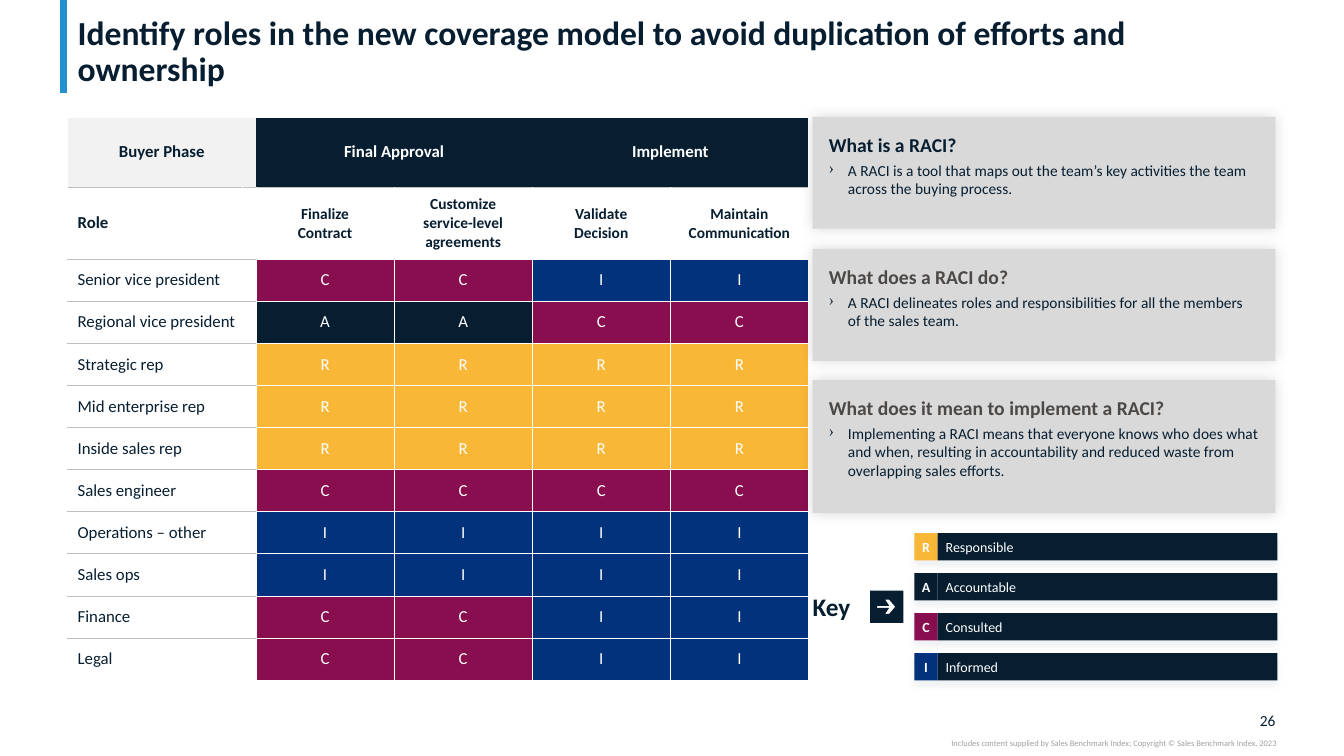
from lxml.etree import SubElement
from pptx import Presentation
from pptx.dml.color import RGBColor
from pptx.enum.shapes import MSO_CONNECTOR, MSO_SHAPE
from pptx.enum.text import MSO_ANCHOR, PP_ALIGN
from pptx.oxml.ns import qn
from pptx.util import Inches, Pt

NAVY, WHITE, GREY = "071E31", "FFFFFF", "BFBFBF"
LEFT, MID, RIGHT = PP_ALIGN.LEFT, PP_ALIGN.CENTER, PP_ALIGN.RIGHT
CODES = {"R": ("Responsible", "F8B737"), "A": ("Accountable", NAVY),
         "C": ("Consulted", "880E4F"), "I": ("Informed", "03327C")}
STEPS = ["Finalize\nContract", "Customize\nservice-level agreements",
         "Validate\nDecision", "Maintain Communication"]
ROLES = [("Senior vice president", "CCII"), ("Regional vice president", "AACC"),
         ("Strategic rep", "RRRR"), ("Mid enterprise rep", "RRRR"),
         ("Inside sales rep", "RRRR"), ("Sales engineer", "CCCC"),
         ("Operations – other", "IIII"), ("Sales ops", "IIII"),
         ("Finance", "CCII"), ("Legal", "CCII")]
CARDS = [
    (1.16, 1.11, NAVY, "What is a RACI?",
     "A RACI is a tool that maps out the team’s key activities the team "
     "across the buying process."),
    (2.47, 1.11, "4C4846", "What does a RACI do?",
     "A RACI delineates roles and responsibilities for all the members of "
     "the sales team."),
    (3.77, 1.32, "4C4846", "What does it mean to implement a RACI?",
     "Implementing a RACI means that everyone knows who does what and when, "
     "resulting in accountability and reduced waste from overlapping sales efforts."),
]
ARROW = [(8.82, 6.01), (8.78, 5.95), (8.82, 5.95), (8.88, 6.02), (8.82, 6.09),
         (8.78, 6.09), (8.82, 6.03), (8.7, 6.03), (8.7, 6.01)]


def tint(code):
    return RGBColor.from_string(code)


def inch(points):
    return [(Inches(x), Inches(y)) for x, y in points]


class Board:
    font = "Calibri"

    def __init__(self, slide):
        self.slide = slide
        self.host = slide.shapes

    def group(self):
        """Send the elements that follow into a new group."""
        self.host = self.slide.shapes.add_group_shape().shapes

    def words(self, para, text, size, color=NAVY, bold=False, align=LEFT):
        para.alignment = align
        for i, part in enumerate(text.split("\n")):
            if i:
                para.add_line_break()
            run = para.add_run()
            run.text = part
            run.font.name = self.font
            run.font.size = Pt(size)
            run.font.bold = bold
            run.font.color.rgb = tint(color)

    def frame(self, shape, inset=(0, 0, 0, 0), anchor=MSO_ANCHOR.MIDDLE, wrap=True):
        frame = shape.text_frame
        frame.word_wrap = wrap
        frame.vertical_anchor = anchor
        (frame.margin_left, frame.margin_top,
         frame.margin_right, frame.margin_bottom) = map(Inches, inset)
        return frame

    def title(self, text, *box):
        shape = self.slide.shapes.title
        shape.left, shape.top, shape.width, shape.height = map(Inches, box)
        para = self.frame(shape, (0.1, 0, 0.1, 0), MSO_ANCHOR.BOTTOM).paragraphs[0]
        para.line_spacing = 0.9
        self.words(para, text, 24, bold=True)

    def label(self, text, box, size, anchor=MSO_ANCHOR.MIDDLE, wrap=True, **style):
        shape = self.host.add_textbox(*map(Inches, box))
        self.words(self.frame(shape, anchor=anchor, wrap=wrap).paragraphs[0],
                   text, size, **style)

    def line(self, x1, y1, x2, y2, color, width):
        line = self.host.add_connector(MSO_CONNECTOR.STRAIGHT,
                                       *map(Inches, (x1, y1, x2, y2)))
        line.line.color.rgb = tint(color)
        line.line.width = Pt(width)
        SubElement(line._element.spPr, qn("a:effectLst"))

    def paint(self, shape, color):
        shape.fill.solid()
        shape.fill.fore_color.rgb = tint(color)
        shape.line.fill.background()
        shape.shadow.inherit = False

    def rect(self, box, color, shade, blur, alpha, dist):
        """Add a rectangle with a soft shadow; alpha is in percent."""
        shape = self.host.add_shape(MSO_SHAPE.RECTANGLE, *map(Inches, box))
        self.paint(shape, color)
        glow = SubElement(shape._element.spPr.find(qn("a:effectLst")), qn("a:outerShdw"),
                          blurRad=str(Pt(blur)), dist=str(Pt(dist)),
                          dir="5400000" if dist else "0", algn="ctr", rotWithShape="0")
        hue = SubElement(glow, qn("a:srgbClr"), val=shade)
        SubElement(hue, qn("a:alpha"), val=str(alpha * 1000))
        return shape

    def card(self, top, height, color, head, body):
        shape = self.rect((8.06, top, 4.59, height), "D9D9D9", "000000", 10, 15, 0)
        frame = self.frame(shape, (0.16,) * 4, MSO_ANCHOR.TOP)
        para = frame.paragraphs[0]
        para.space_after = Pt(3)
        self.words(para, head, 14, color, True)
        para = frame.add_paragraph()
        props = para._p.get_or_add_pPr()
        props.set("marL", str(Inches(0.19)))
        props.set("indent", str(Inches(-0.19)))
        SubElement(SubElement(props, qn("a:buClr")), qn("a:srgbClr"), val=NAVY)
        SubElement(props, qn("a:buChar"), char="›")
        para.space_after = Pt(6)
        self.words(para, body, 11)

    def tag(self, box, text, color, inset=0, **style):
        shape = self.rect(box, color, NAVY, 4, 6, 4)
        para = self.frame(shape, (inset,) * 4).paragraphs[0]
        self.words(para, text, 10, WHITE, **style)

    def icon(self, *outlines):
        """Fill the area between closed outlines."""
        first, *rest = map(inch, outlines)
        pen = self.host.build_freeform(*first[0], scale=1.0)
        pen.add_line_segments(first[1:], close=True)
        for points in rest:
            pen.move_to(*points[0])
            pen.add_line_segments(points[1:], close=True)
        self.paint(pen.convert_to_shape(), NAVY)

    def grid(self, box, cols, rows):
        shape = self.host.add_table(len(rows), len(cols), *map(Inches, box))
        table = shape.table
        table.first_row = table.horz_banding = False
        for col, width in zip(table.columns, cols):
            col.width = Inches(width)
        for row, height in zip(table.rows, rows):
            row.height = Inches(height)
        return table

    def cell(self, cell, fill, edges, text="", size=12, inset=0, **style):
        """Format a cell; edges are left, right, top, bottom colours or None."""
        cell.margin_left = Inches(inset)
        cell.margin_right = cell.margin_top = cell.margin_bottom = 0
        cell.vertical_anchor = MSO_ANCHOR.MIDDLE
        props = cell._tc.get_or_add_tcPr()
        for side, color in zip("LRTB", edges):
            edge = SubElement(props, qn("a:ln" + side), w=str(Pt(0.5)))
            if color:
                SubElement(SubElement(edge, qn("a:solidFill")), qn("a:srgbClr"), val=color)
            else:
                SubElement(edge, qn("a:noFill"))
        cell.fill.solid()
        cell.fill.fore_color.rgb = tint(fill)
        if text:
            self.words(cell.text_frame.paragraphs[0], text, size, **style)


def matrix(board):
    """Build the table of roles against buyer phases."""
    table = board.grid((0.67, 1.16, 7.24, 5.59), [1.73, 0.03] + [1.37] * 4,
                       [0.7, 0.71] + [4.18 / len(ROLES)] * len(ROLES))
    heads = {0: ("Buyer Phase", NAVY), 2: ("Final Approval", WHITE), 4: ("Implement", WHITE)}
    last = len(ROLES) + 1
    for r in range(last + 1):
        for c in range(6):
            side = WHITE if r else None
            top = GREY if r == 1 or (r > 1 and c < 2) else WHITE
            base = GREY if r == 0 or (c < 2 and r < last) else WHITE
            edges = side, side, top, base
            cell = table.cell(r, c)
            if r == 0:
                text, color = heads.get(c, ("", NAVY))
                board.cell(cell, "F2F2F2" if c < 2 else NAVY, edges, text,
                           color=color, bold=True, align=MID)
            elif c < 2:
                text = "" if c else "Role" if r == 1 else ROLES[r - 2][0]
                board.cell(cell, WHITE, edges, text, inset=0 if c else 0.1, bold=r == 1)
            elif r == 1:
                board.cell(cell, WHITE, edges, STEPS[c - 2], 11, bold=True, align=MID)
            else:
                code = ROLES[r - 2][1][c - 2]
                board.cell(cell, CODES[code][1], edges, code, color=WHITE, align=MID)
        for c in (0, 2, 4) if r == 0 else (0,) if r > 1 else ():
            table.cell(r, c).merge(table.cell(r, c + 1))


def main():
    deck = Presentation()
    deck.slide_width, deck.slide_height = Inches(13.33), Inches(7.5)
    board = Board(deck.slides.add_slide(deck.slide_layouts[5]))
    board.line(0.63, 0, 0.63, 0.92, "2391CF", 5)
    board.label("26", (12.32, 7.05, 0.33, 0.19), 11, align=RIGHT)
    board.label("Includes content supplied by Sales Benchmark Index; "
                "Copyright © Sales Benchmark Index, 2023", (7.5, 7.32, 5.16, 0.1), 6,
                MSO_ANCHOR.TOP, color="A0A0A0", align=RIGHT)
    board.title("Identify roles in the new coverage model to avoid duplication "
                "of efforts and ownership", 0.67, 0.04, 11.99, 0.84)
    matrix(board)
    for card in CARDS:
        board.card(*card)
    board.group()
    for i, (code, (name, color)) in enumerate(CODES.items()):
        top = 5.29 + i * 1.19 / 3
        board.tag((9.07, top, 0.23, 0.27), code, color, bold=True, align=MID)
        board.tag((9.3, top, 3.37, 0.27), name, NAVY, 0.08)
    board.label("Key", (8.06, 5.87, 0.41, 0.3), 18, wrap=False, bold=True)
    board.icon([(8.63, 5.86), (8.96, 5.86), (8.96, 6.18), (8.63, 6.18)], ARROW)
    deck.save("out.pptx")


if __name__ == "__main__":
    main()
